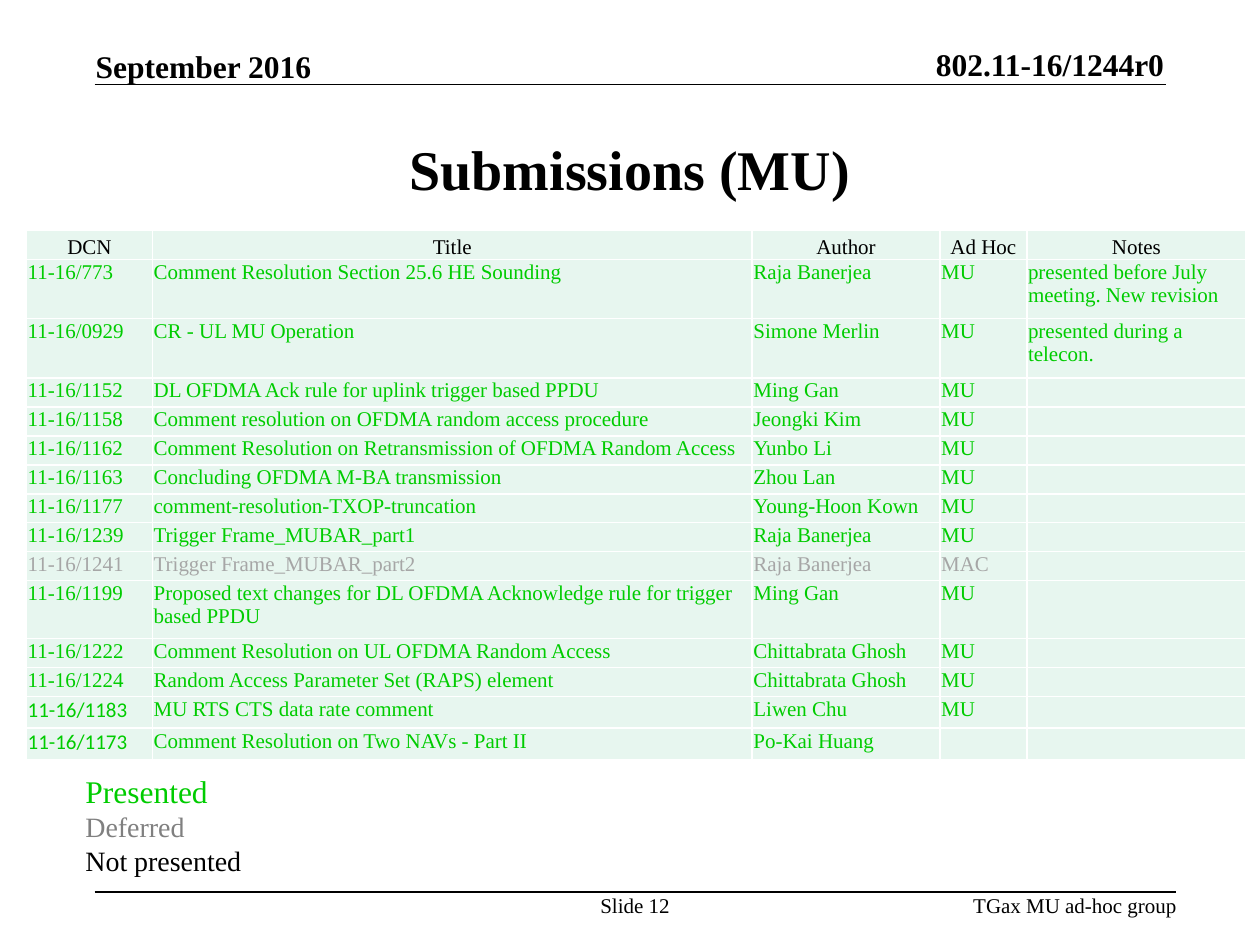
from lxml.etree import SubElement
from pptx import Presentation
from pptx.dml.color import RGBColor
from pptx.enum.shapes import MSO_CONNECTOR
from pptx.enum.text import MSO_ANCHOR, PP_ALIGN
from pptx.oxml.ns import qn
from pptx.util import Inches, Pt

SERIF, SANS = "Times New Roman", "Calibri"
BLACK, WHITE, MINT = "000000", "FFFFFF", "E7F6EF"
GREEN, GREY, PALE_GREY = "00CC00", "808080", "A6A6A6"
LEFT, CENTER, RIGHT = PP_ALIGN.LEFT, PP_ALIGN.CENTER, PP_ALIGN.RIGHT
TOP, MIDDLE, BOTTOM = MSO_ANCHOR.TOP, MSO_ANCHOR.MIDDLE, MSO_ANCHOR.BOTTOM

# Content
TITLE = "Submissions (MU)"
HEADER = ("DCN", "Title", "Author", "Ad Hoc", "Notes")
SUBMISSIONS = [
    ("11-16/773", "Comment Resolution Section 25.6 HE Sounding", "Raja Banerjea", "MU",
     "presented before July meeting. New revision"),
    ("11-16/0929", "CR - UL MU Operation", "Simone Merlin", "MU", "presented during a telecon."),
    ("11-16/1152", "DL OFDMA Ack rule for uplink trigger based PPDU", "Ming Gan", "MU", ""),
    ("11-16/1158", "Comment resolution on OFDMA random access procedure", "Jeongki Kim", "MU", ""),
    ("11-16/1162", "Comment Resolution on Retransmission of OFDMA Random Access", "Yunbo Li", "MU", ""),
    ("11-16/1163", "Concluding OFDMA M-BA transmission", "Zhou Lan", "MU", ""),
    ("11-16/1177", "comment-resolution-TXOP-truncation", "Young-Hoon Kown", "MU", ""),
    ("11-16/1239", "Trigger Frame_MUBAR_part1", "Raja Banerjea", "MU", ""),
    ("11-16/1241", "Trigger Frame_MUBAR_part2", "Raja Banerjea", "MAC", ""),
    ("11-16/1199", "Proposed text changes for DL OFDMA Acknowledge rule for trigger based PPDU",
     "Ming Gan", "MU", ""),
    ("11-16/1222", "Comment Resolution on UL OFDMA Random Access", "Chittabrata Ghosh", "MU", ""),
    ("11-16/1224", "Random Access Parameter Set (RAPS) element", "Chittabrata Ghosh", "MU", ""),
    ("11-16/1183", "MU RTS CTS data rate comment", "Liwen Chu", "MU", ""),
    ("11-16/1173", "Comment Resolution on Two NAVs - Part II", "Po-Kai Huang", "", ""),
]
DEFERRED = {"11-16/1241"}
SANS_DCNS = {"11-16/1183", "11-16/1173"}
TWO_LINE_DCNS = {"11-16/773", "11-16/0929", "11-16/1199"}
LEGEND = [("Presented", 18, GREEN), ("Deferred", 16, GREY), ("Not presented", 16, BLACK)]
# Running text: text, box, size, bold, alignment, anchor
RUNNING = [
    ("802.11-16/1244r0", (6.9, 0.36, 2.34, 0.3), 18, True, RIGHT, BOTTOM),
    ("September 2016", (0.76, 0.37, 2.07, 0.3), 18, True, LEFT, BOTTOM),
    ("TGax MU ad-hoc group", (7.71, 7.08, 1.63, 0.2), 12, False, RIGHT, TOP),
    ("Slide 12", (4.75, 7.08, 0.58, 0.2), 12, False, CENTER, TOP),
]
RULES = [(0.75, 9.25, 0.67), (0.75, 9.33, 7.08)]  # from x, to x, y
COLUMNS = (1, 4.76, 1.49, 0.69, 1.74)


def rgb(value):
    return RGBColor.from_string(value)


def write(p, text, size, color=BLACK, bold=False, align=LEFT, font=SERIF):
    p.text = text
    p.alignment = align
    for r in p.runs:
        r.font.name, r.font.size, r.font.bold = font, Pt(size), bold
        r.font.color.rgb = rgb(color)
    if not text:
        SubElement(p._p, qn("a:endParaRPr"), sz=str(size * 100))


def row_height(dcn):
    if dcn in TWO_LINE_DCNS:
        return 0.47 if dcn != "11-16/1199" else 0.46
    return 0.25 if dcn in SANS_DCNS else 0.23


def style_cell(cell, anchor):
    cell.margin_left = cell.margin_right = cell.margin_top = Inches(0.01)
    cell.margin_bottom = 0
    cell.vertical_anchor = anchor
    tc_pr = cell._tc.get_or_add_tcPr()
    for side in ("lnL", "lnR", "lnT", "lnB"):
        ln = SubElement(tc_pr, qn(f"a:{side}"), w=str(Pt(1)))
        SubElement(SubElement(ln, qn("a:solidFill")), qn("a:srgbClr"), val=WHITE)
    cell.fill.solid()
    cell.fill.fore_color.rgb = rgb(MINT)


prs = Presentation()
prs.slide_width, prs.slide_height = Inches(10), Inches(7.5)
s = prs.slides.add_slide(prs.slide_layouts[5])

# Title
sp = s.shapes.title
sp.left, sp.top, sp.width, sp.height = map(Inches, (0.75, 0.75, 8.5, 1.17))
sp.text_frame.vertical_anchor = MIDDLE
write(sp.text_frame.paragraphs[0], TITLE, 32, bold=True, align=CENTER)

# Header and footer rules
for x1, x2, y in RULES:
    line = s.shapes.add_connector(MSO_CONNECTOR.STRAIGHT, *map(Inches, (x1, y, x2, y)))
    line.line.color.rgb = rgb(BLACK)
    line.line.width = Pt(1)
    SubElement(line._element.spPr, qn("a:effectLst"))

# Header and footer text
for text, box, size, bold, align, anchor in RUNNING:
    tf = s.shapes.add_textbox(*map(Inches, box)).text_frame
    tf.margin_left = tf.margin_right = tf.margin_top = tf.margin_bottom = 0
    tf.vertical_anchor = anchor
    write(tf.paragraphs[0], text, size, bold=bold, align=align)

# Submissions table
rows = [HEADER, *SUBMISSIONS]
heights = [row_height(row[0]) for row in rows]
table = s.shapes.add_table(len(rows), len(COLUMNS), Inches(0.21), Inches(1.83),
                           Inches(sum(COLUMNS)), Inches(sum(heights))).table
table.horz_banding = table.first_row = False
for column, width in zip(table.columns, COLUMNS):
    column.width = Inches(width)
for i, row in enumerate(rows):
    table.rows[i].height = Inches(heights[i])
    is_header, dcn = i == 0, row[0]
    color = BLACK if is_header else PALE_GREY if dcn in DEFERRED else GREEN
    for j, text in enumerate(row):
        cell = table.cell(i, j)
        style_cell(cell, BOTTOM if is_header else TOP)
        write(cell.text_frame.paragraphs[0], text, 12, color,
              align=CENTER if is_header else LEFT,
              font=SANS if j == 0 and dcn in SANS_DCNS else SERIF)

# Status legend
tf = s.shapes.add_textbox(*map(Inches, (0.58, 6.08, 1.46, 0.94))).text_frame
for i, (text, size, color) in enumerate(LEGEND):
    write(tf.add_paragraph() if i else tf.paragraphs[0], text, size, color)

prs.save("out.pptx")
